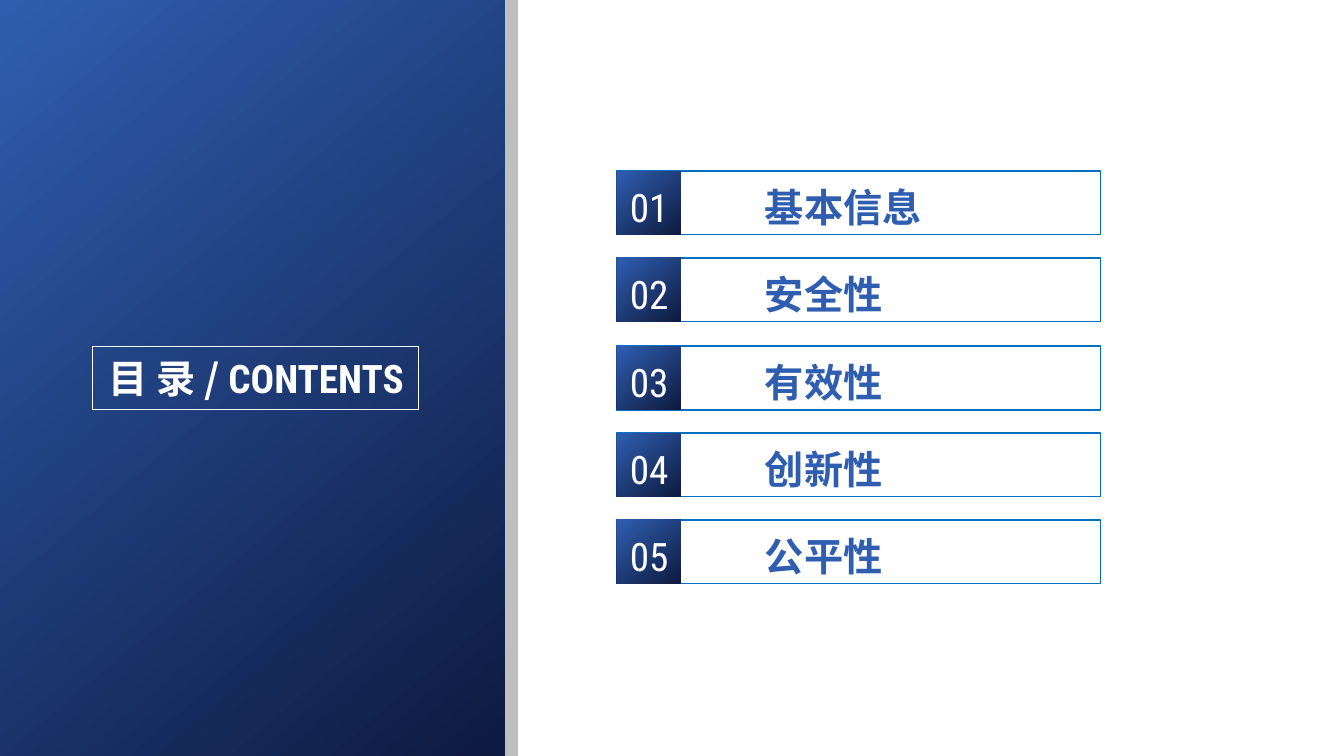
"""Build the contents slide with its title panel and five numbered sections."""
from dataclasses import dataclass

from lxml.etree import SubElement
from pptx import Presentation
from pptx.dml.color import RGBColor
from pptx.enum.shapes import MSO_SHAPE as Preset
from pptx.enum.text import MSO_AUTO_SIZE as AutoSize, PP_ALIGN as Align
from pptx.oxml.ns import qn
from pptx.shapes.autoshape import Shape
from pptx.slide import Slide
from pptx.text.text import _Paragraph as Paragraph, _Run as Run
from pptx.util import Emu, Pt

EMU_PER_PX = 12192000 / 1344


@dataclass(frozen=True)
class Theme:
    white: str = "FFFFFF"
    strip: str = "BFBFBF"
    navy: str = "0E1A40"
    blue: str = "2F5EB0"
    outline: str = "0070C0"
    chinese: str = "Noto Sans CJK SC"
    latin: str = "Roboto Condensed"
    text_size: float = 28
    line_width: float = 0.75
    gradient_angle: float = 130


@dataclass(frozen=True)
class Box:
    left: int
    top: int
    width: int
    height: int

    def emu(self) -> tuple[Emu, ...]:
        return tuple(px(side) for side in (self.left, self.top, self.width, self.height))


@dataclass(frozen=True)
class Section:
    number: str
    title: str


THEME = Theme()
SECTIONS = (
    Section("01", "基本信息"),
    Section("02", "安全性"),
    Section("03", "有效性"),
    Section("04", "创新性"),
    Section("05", "公平性"),
)
FIRST_TOP, LAST_TOP = 171, 520
SECTION_LEFT, SECTION_WIDTH, SECTION_HEIGHT = 617, 484, 64
TITLE_TAB = 135


def px(length: int) -> Emu:
    return Emu(round(length * EMU_PER_PX))


def rgb(colour: str) -> RGBColor:
    return RGBColor.from_string(colour)


def add_rectangle(slide: Slide, box: Box) -> Shape:
    rectangle = slide.shapes.add_shape(Preset.RECTANGLE, *box.emu())
    rectangle.shadow.inherit = False
    rectangle.line.fill.background()
    return rectangle


def add_solid(slide: Slide, box: Box, colour: str) -> None:
    fill = add_rectangle(slide, box).fill
    fill.solid()
    fill.fore_color.rgb = rgb(colour)


def add_gradient(slide: Slide, box: Box) -> None:
    fill = add_rectangle(slide, box).fill
    fill.gradient()
    fill.gradient_angle = THEME.gradient_angle
    for stop, position, colour in zip(fill.gradient_stops, (0, 1), (THEME.navy, THEME.blue)):
        stop.position = position
        stop.color.rgb = rgb(colour)


def add_outline(slide: Slide, box: Box, colour: str) -> None:
    frame = add_rectangle(slide, box)
    frame.fill.background()
    frame.line.color.rgb = rgb(colour)
    frame.line.width = Pt(THEME.line_width)


def add_text(slide: Slide, box: Box, text: str) -> Paragraph:
    text_frame = slide.shapes.add_textbox(*box.emu()).text_frame
    text_frame.word_wrap = True
    text_frame.auto_size = AutoSize.SHAPE_TO_FIT_TEXT
    text_frame.text = text
    return text_frame.paragraphs[0]


def style_run(run: Run, typeface: str, colour: str, bold: bool) -> None:
    run.font.size = Pt(THEME.text_size)
    run.font.bold = bold
    run.font.color.rgb = rgb(colour)
    run.font.name = typeface
    SubElement(run.font._element, qn("a:ea"), typeface=typeface)


def append_run(paragraph: Paragraph, text: str) -> Run:
    run = paragraph.add_run()
    run.text = text
    return run


def add_title_panel(slide: Slide) -> None:
    add_solid(slide, Box(13, 0, 505, 756), THEME.strip)
    add_gradient(slide, Box(0, 0, 505, 756))
    add_outline(slide, Box(93, 347, 326, 63), THEME.white)
    heading = add_text(slide, Box(85, 349, 342, 57), "目 录 / ")
    heading.alignment = Align.CENTER
    style_run(heading.runs[0], THEME.chinese, THEME.white, True)
    style_run(append_run(heading, "CONTENTS"), THEME.latin, THEME.white, True)


def add_section(slide: Slide, section: Section, top: int) -> None:
    add_outline(slide, Box(SECTION_LEFT, top, SECTION_WIDTH, SECTION_HEIGHT), THEME.outline)
    add_gradient(slide, Box(SECTION_LEFT, top, SECTION_HEIGHT, SECTION_HEIGHT))
    entry = add_text(slide, Box(SECTION_LEFT + 6, top + 8, 454, 55), f"{section.number}\t")
    text_frame = slide.shapes[-1].text_frame
    text_frame.margin_left = text_frame.margin_right = px(7)
    text_frame.margin_top = text_frame.margin_bottom = px(4)
    tabs = SubElement(entry._p.get_or_add_pPr(), qn("a:tabLst"))
    SubElement(tabs, qn("a:tab"), pos=str(px(TITLE_TAB)), algn="l")
    style_run(entry.runs[0], THEME.latin, THEME.white, False)
    style_run(append_run(entry, section.title), THEME.chinese, THEME.blue, True)


def main() -> None:
    presentation = Presentation()
    presentation.slide_width, presentation.slide_height = px(1344), px(756)
    slide = presentation.slides.add_slide(presentation.slide_layouts[6])
    add_title_panel(slide)
    pitch = (LAST_TOP - FIRST_TOP) / (len(SECTIONS) - 1)
    for index, section in enumerate(SECTIONS):
        add_section(slide, section, round(FIRST_TOP + index * pitch))
    presentation.save("out.pptx")


if __name__ == "__main__":
    main()
